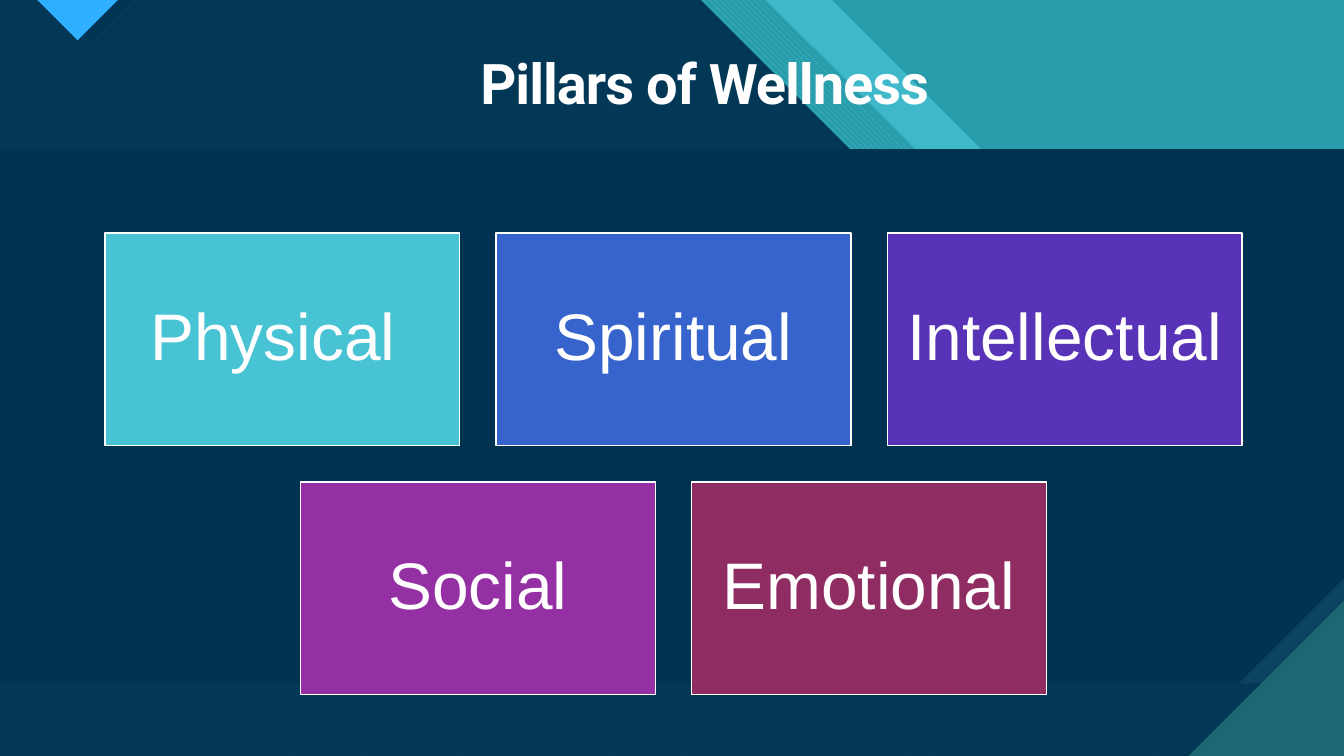
from dataclasses import dataclass

from lxml import etree
from pptx import Presentation
from pptx.dml.color import RGBColor
from pptx.dml.fill import FillFormat
from pptx.enum.dml import MSO_PATTERN
from pptx.enum.shapes import MSO_SHAPE
from pptx.enum.text import MSO_ANCHOR, PP_ALIGN
from pptx.oxml.ns import qn
from pptx.shapes.autoshape import Shape
from pptx.slide import Slide
from pptx.text.text import TextFrame
from pptx.util import Inches, Pt

RECTANGLE = MSO_SHAPE.RECTANGLE
SNIPPED = MSO_SHAPE.SNIP_1_RECTANGLE
DOWN_STRIPES = MSO_PATTERN.WIDE_DOWNWARD_DIAGONAL
UP_STRIPES = MSO_PATTERN.WIDE_UPWARD_DIAGONAL
MIDDLE = MSO_ANCHOR.MIDDLE
CENTER = PP_ALIGN.CENTER

WHITE = RGBColor(0xFF, 0xFF, 0xFF)
NAVY = RGBColor(0x00, 0x33, 0x52)
SLATE = RGBColor(0x0C, 0x43, 0x60)
SKY = RGBColor(0x2F, 0xAF, 0xFF)
TEAL = RGBColor(0x29, 0x9C, 0xAB)
LIGHT_TEAL = RGBColor(0x3F, 0xB9, 0xC9)
DEEP_TEAL = RGBColor(0x1B, 0x68, 0x72)
AQUA = RGBColor(0x47, 0xC3, 0xD3)
BLUE = RGBColor(0x37, 0x64, 0xCC)
INDIGO = RGBColor(0x58, 0x33, 0xB8)
PURPLE = RGBColor(0x94, 0x30, 0xA3)
MAROON = RGBColor(0x8F, 0x2D, 0x63)

# Slide and card grid, in inches
SLIDE_W, SLIDE_H = 13.33, 7.5
PANEL_TOP, PANEL_H = 1.48, 5.3
CARD_W, CARD_H, CARD_GAP = 3.52, 2.11, 0.36
GRID_CENTER, GRID_TOP = 6.68, 2.31

Point = tuple[float, float]


@dataclass(frozen=True)
class Paint:
    color: RGBColor
    pattern: MSO_PATTERN | None = None
    back: RGBColor | None = None
    opacity: int = 100


@dataclass(frozen=True)
class Pillar:
    name: str
    color: RGBColor


@dataclass(frozen=True)
class Diagonal:
    top_x: float
    paint: Paint


PILLAR_ROWS = [
    [Pillar("Physical ", AQUA), Pillar("Spiritual", BLUE), Pillar("Intellectual", INDIGO)],
    [Pillar("Social", PURPLE), Pillar("Emotional", MAROON)],
]
DIAGONALS = [
    Diagonal(8.25, Paint(LIGHT_TEAL)),
    Diagonal(7.6, Paint(AQUA, DOWN_STRIPES, TEAL)),
    Diagonal(6.95, Paint(AQUA, UP_STRIPES, DEEP_TEAL)),
    Diagonal(6.95, Paint(NAVY, opacity=90)),
]


def apply_paint(fill: FillFormat, paint: Paint) -> None:
    if paint.pattern is not None:
        fill.patterned()
        fill.pattern = paint.pattern
        fill.fore_color.rgb = paint.color
        fill.back_color.rgb = paint.back
        return
    fill.solid()
    fill.fore_color.rgb = paint.color


def finish(shape: Shape, paint: Paint, outlined: bool = False) -> Shape:
    shape.shadow.inherit = False
    apply_paint(shape.fill, paint)
    if paint.opacity < 100:
        color = shape._element.spPr.find(f"{qn('a:solidFill')}/{qn('a:srgbClr')}")
        etree.SubElement(color, qn("a:alpha")).set("val", str(paint.opacity * 1000))
    if outlined:
        shape.line.color.rgb = WHITE
        shape.line.width = Pt(1)
    else:
        shape.line.fill.background()
    return shape


def add_polygon(slide: Slide, points: list[Point], paint: Paint) -> Shape:
    start, *others = [(Inches(x), Inches(y)) for x, y in points]
    builder = slide.shapes.build_freeform(*start)
    builder.add_line_segments(others, close=True)
    return finish(builder.convert_to_shape(), paint)


def add_panel(slide: Slide, snip: float, color: RGBColor) -> None:
    panel = slide.shapes.add_shape(
        SNIPPED, 0, Inches(PANEL_TOP), Inches(SLIDE_W), Inches(PANEL_H))
    panel.adjustments[0] = snip
    panel._element.spPr.find(qn("a:xfrm")).set("flipV", "1")
    finish(panel, Paint(color))


def write(frame: TextFrame, text: str, *, size: float, font: str, bold: bool = False,
          spacing: float = 0, inset: Point = (0.1, 0.05)) -> None:
    frame.word_wrap = True
    frame.vertical_anchor = MIDDLE
    frame.margin_left = frame.margin_right = Inches(inset[0])
    frame.margin_top = frame.margin_bottom = Inches(inset[1])
    paragraph = frame.paragraphs[0]
    paragraph.alignment = CENTER
    paragraph.line_spacing = 0.9
    run = paragraph.add_run()
    run.text = text
    run.font.size = Pt(size)
    run.font.name = font
    run.font.bold = bold
    run.font.color.rgb = WHITE
    if spacing:
        run.font._element.set("spc", str(round(spacing * 100)))


def add_backdrop(slide: Slide) -> None:
    apply_paint(slide.background.fill, Paint(TEAL))
    # Slanted bands, each reaching from the left edge to a 45-degree line
    for diagonal in DIAGONALS:
        drop = SLIDE_W - diagonal.top_x
        add_polygon(slide, [(0, 0), (diagonal.top_x, 0), (SLIDE_W, drop),
                            (SLIDE_W, SLIDE_H), (0, SLIDE_H)], diagonal.paint)
    # Blue marker and its shade
    for left, depth, color in ((0.49, 0.41, NAVY), (0.37, 0.4, SKY)):
        add_polygon(slide, [(left, 0), (left + depth, depth), (left + 2 * depth, 0)],
                    Paint(color))
    # Content panel with a cut corner
    add_panel(slide, 0, SLATE)
    add_panel(slide, 0.197, NAVY)
    # Lower right corner
    corner = 1.54
    add_polygon(slide, [(SLIDE_W - corner, SLIDE_H), (SLIDE_W, SLIDE_H),
                        (SLIDE_W, SLIDE_H - corner)], Paint(DEEP_TEAL))


def add_pillars(slide: Slide) -> None:
    for row, pillars in enumerate(PILLAR_ROWS):
        row_w = len(pillars) * (CARD_W + CARD_GAP) - CARD_GAP
        top = GRID_TOP + row * (CARD_H + CARD_GAP)
        for column, pillar in enumerate(pillars):
            left = GRID_CENTER - row_w / 2 + column * (CARD_W + CARD_GAP)
            card = slide.shapes.add_shape(
                RECTANGLE, Inches(left), Inches(top), Inches(CARD_W), Inches(CARD_H))
            finish(card, Paint(pillar.color), outlined=True)
            write(card.text_frame, pillar.name, size=47, font="Arial", inset=(0.15, 0.2))


def main() -> None:
    deck = Presentation()
    deck.slide_width, deck.slide_height = Inches(SLIDE_W), Inches(SLIDE_H)
    slide = deck.slides.add_slide(deck.slide_layouts[6])
    add_backdrop(slide)
    # Title
    title = slide.shapes.add_textbox(Inches(1.5), Inches(0.38), Inches(10.98), Inches(0.96))
    write(title.text_frame, "Pillars of Wellness", size=40, font="Roboto", bold=True,
          spacing=-0.7)
    add_pillars(slide)
    deck.save("out.pptx")


if __name__ == "__main__":
    main()
